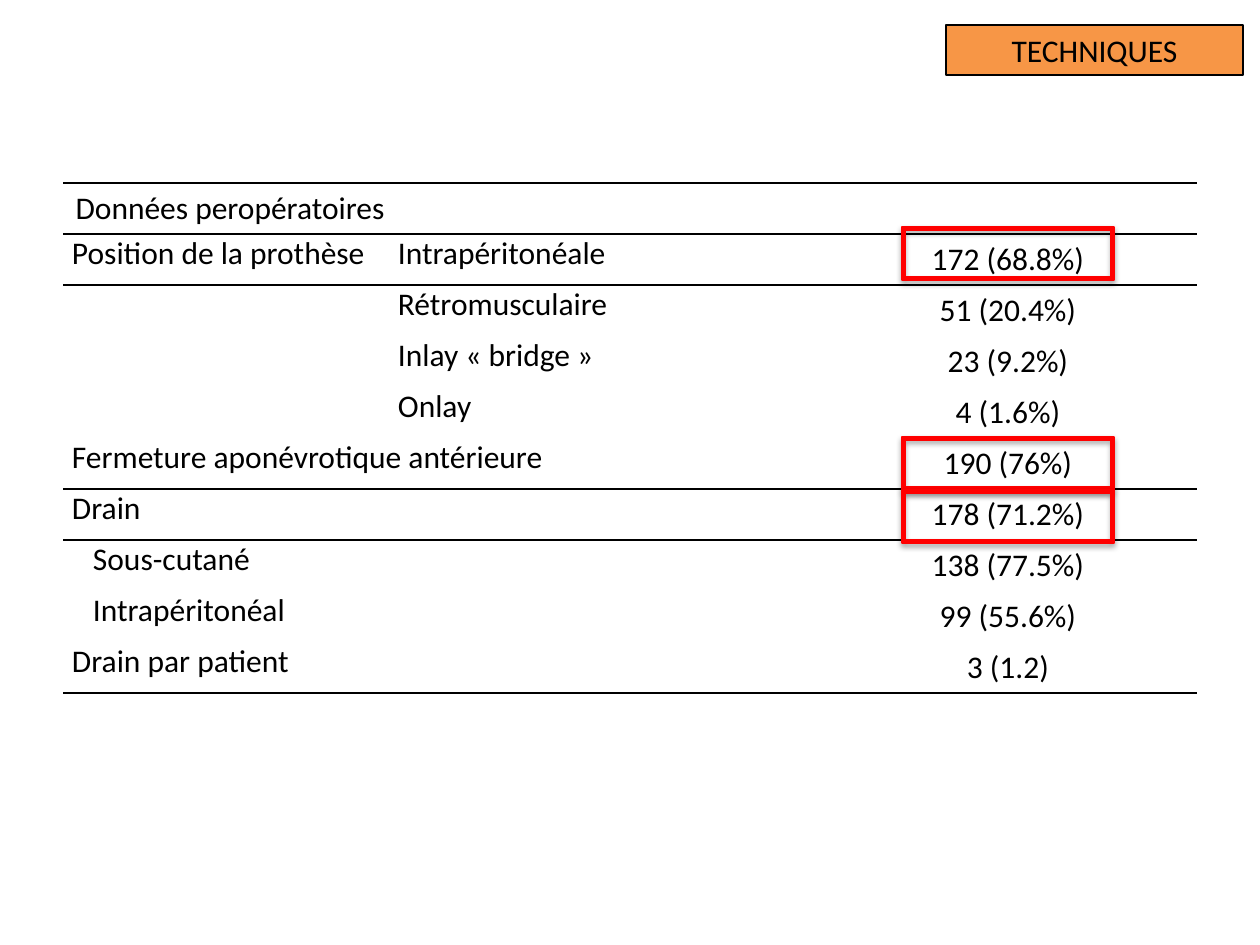
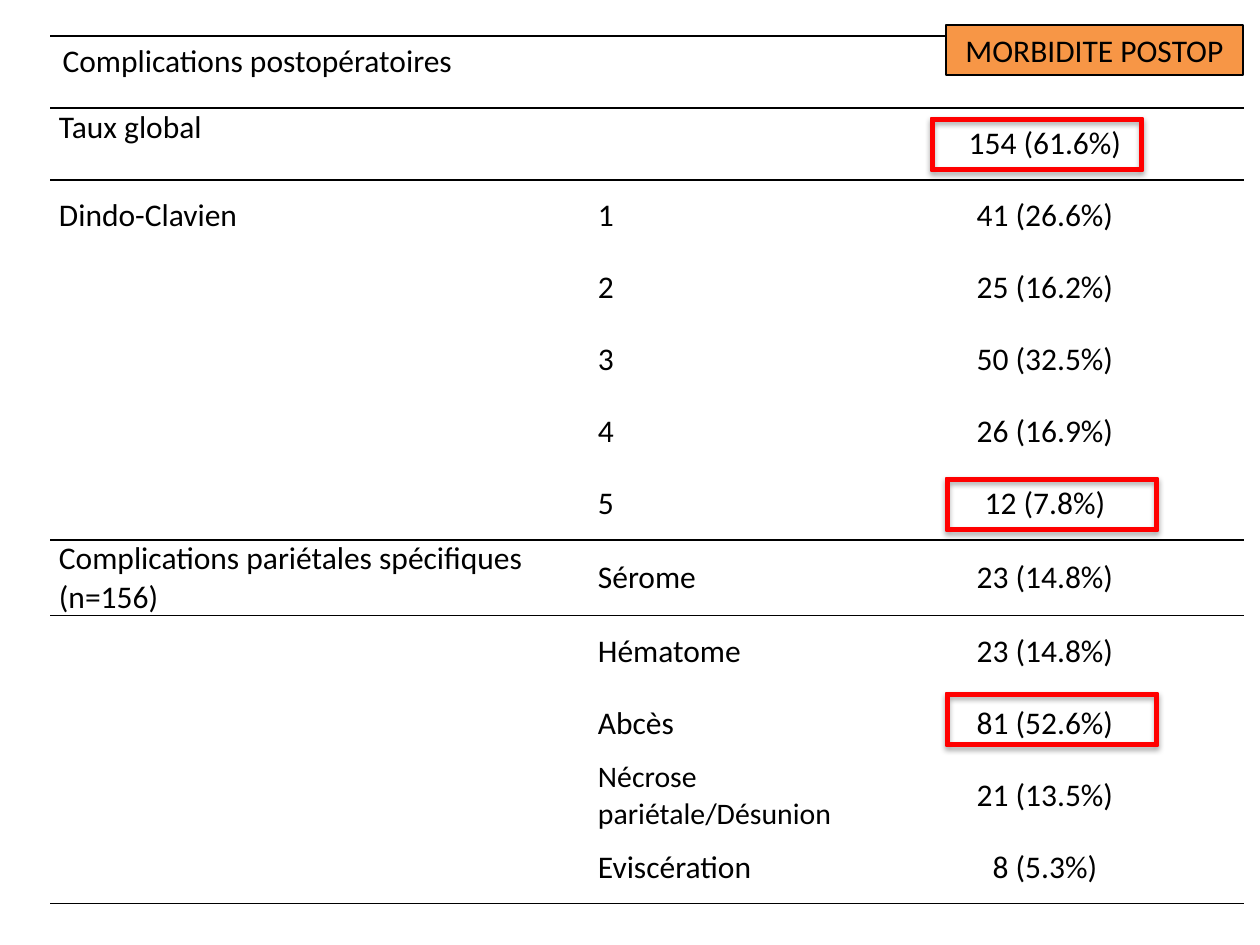
"""Build two slides of surgical results: techniques and postoperative morbidity."""
from dataclasses import dataclass

from lxml.etree import SubElement
from pptx import Presentation
from pptx.dml.color import RGBColor as RGB
from pptx.enum.shapes import MSO_SHAPE as SHAPE
from pptx.enum.text import MSO_ANCHOR as ANCHOR, MSO_AUTO_SIZE as AUTO, PP_ALIGN as ALIGN
from pptx.oxml import parse_xml
from pptx.oxml.ns import nsdecls, qn
from pptx.util import Pt


@dataclass(frozen=True)
class Theme:
    font: str = "Calibri"
    body: int = 18
    small: int = 17
    ink: str = "000000"
    badge: str = "F79646"
    mark: str = "FF0000"
    rule: float = 1
    mark_line: float = 0.75


T = Theme()
EMU_PER_PX = 914400 / 126
NO_GRID = "{2D5ABB26-0587-4C30-8999-92F81FD0307C}"
PAD = 9
INDENT = 21
BADGE = (946, 25, 297, 50)
MARK_SIZE = (212, 53)

SLIDES = [
    {
        "badge": "TECHNIQUES",
        "origin": (63, 183),
        "cols": (326, 430, 378),
        "row_height": 51,
        "rules": (0, 1, 6, 10),
        "last_top_row": 9,
        "indented": ("Sous-cutané", "Intrapéritonéal"),
        "small": (),
        "marks": ((902, 227), (902, 437), (902, 490)),
        "rows": [
            ("Données peropératoires", None, None),
            ("Position de la prothèse", "Intrapéritonéale", "172 (68.8%)"),
            ("", "Rétromusculaire", "51 (20.4%)"),
            ("", "Inlay « bridge »", "23 (9.2%)"),
            ("", "Onlay", "4 (1.6%)"),
            ("Fermeture aponévrotique antérieure", None, "190 (76%)"),
            ("Drain", None, "178 (71.2%)"),
            ("Sous-cutané", None, "138 (77.5%)"),
            ("Intrapéritonéal", None, "99 (55.6%)"),
            ("Drain par patient", None, "3 (1.2)"),
        ],
    },
    {
        "badge": "MORBIDITE POSTOP",
        "origin": (50, 36),
        "cols": (539, 257, 398),
        "row_height": 72,
        "rules": (0, 1, 7, 12),
        "last_top_row": 1,
        "indented": (),
        "small": ("Nécrose pariétale/Désunion",),
        "marks": ((931, 118), (946, 478), (946, 693)),
        "rows": [
            ("Complications postopératoires", None, None),
            ("Taux global", None, "154 (61.6%)"),
            ("Dindo-Clavien", "1", "41 (26.6%)"),
            ("", "2", "25 (16.2%)"),
            ("", "3", "50 (32.5%)"),
            ("", "4", "26 (16.9%)"),
            ("", "5", "12 (7.8%)"),
            ("Complications pariétales spécifiques (n=156)", "Sérome", "23 (14.8%)"),
            ("", "Hématome", "23 (14.8%)"),
            ("", "Abcès", "81 (52.6%)"),
            ("", "Nécrose pariétale/Désunion", "21 (13.5%)"),
            ("", "Eviscération", "8 (5.3%)"),
        ],
    },
]


def px(*lengths):
    return [round(n * EMU_PER_PX) for n in lengths]


def write(tf, text, size, align):
    tf.text = text
    p = tf.paragraphs[0]
    p.alignment = align
    for r in p.runs:
        r.font.name = T.font
        r.font.size = Pt(size)
        r.font.color.rgb = RGB.from_string(T.ink)


prs = Presentation()
prs.slide_width, prs.slide_height = px(1260, 945)
blank = prs.slide_layouts[6]

for page in SLIDES:
    s = prs.slides.add_slide(blank)

    rows, cols = page["rows"], page["cols"]
    size = (sum(cols), len(rows) * page["row_height"])
    tbl = s.shapes.add_table(len(rows), len(cols), *px(*page["origin"], *size)).table
    tbl.first_row = tbl.horz_banding = False
    tbl._tbl.tblPr.find(qn("a:tableStyleId")).text = NO_GRID
    for col, width in zip(tbl.columns, px(*cols)):
        col.width = width
    for row in tbl.rows:
        row.height = px(page["row_height"])[0]

    for i, row in enumerate(rows):
        for j, text in enumerate(row):
            cell = tbl.cell(i, j)
            for tag, edge in (("a:lnT", i), ("a:lnB", i + 1)):
                if edge in page["rules"]:
                    ln = SubElement(cell._tc.get_or_add_tcPr(), qn(tag), w=str(Pt(T.rule)))
                    fill = SubElement(ln, qn("a:solidFill"))
                    SubElement(fill, qn("a:srgbClr"), val=T.ink)
            cell.fill.background()
            if i > 0:
                left = PAD + INDENT if text in page["indented"] else PAD
                cell.margin_left, cell.margin_right = px(left, PAD)
                cell.margin_top = cell.margin_bottom = 0
                centred = j == 2 or i > page["last_top_row"]
                cell.vertical_anchor = ANCHOR.MIDDLE if centred else ANCHOR.TOP
            if text:
                pt = T.small if text in page["small"] else T.body
                write(cell.text_frame, text, pt, ALIGN.CENTER if j == 2 else ALIGN.LEFT)
        if None in row:
            tbl.cell(i, 0).merge(tbl.cell(i, row.count(None)))

    sp = s.shapes.add_shape(SHAPE.RECTANGLE, *px(*BADGE))
    sp.shadow.inherit = False
    sp.fill.solid()
    sp.fill.fore_color.rgb = RGB.from_string(T.badge)
    sp.line.color.rgb = RGB.from_string(T.ink)
    sp.line.width = Pt(T.rule)
    tf = sp.text_frame
    tf.word_wrap = True
    tf.auto_size = AUTO.SHAPE_TO_FIT_TEXT
    write(tf, page["badge"], T.body, ALIGN.CENTER)

    for corner in page["marks"]:
        sp = s.shapes.add_shape(SHAPE.FRAME, *px(*corner, *MARK_SIZE))
        sp.adjustments[0] = 0.07
        sp.fill.solid()
        sp.fill.fore_color.rgb = RGB.from_string(T.mark)
        sp.line.color.rgb = RGB.from_string(T.mark)
        sp.line.width = Pt(T.mark_line)
        sp._element.spPr.append(parse_xml(
            f'<a:effectLst {nsdecls("a")}>'
            '<a:outerShdw blurRad="40000" dist="23000" dir="5400000" rotWithShape="0">'
            f'<a:srgbClr val="{T.ink}"><a:alpha val="35000"/></a:srgbClr>'
            '</a:outerShdw></a:effectLst>'))

prs.save("out.pptx")
